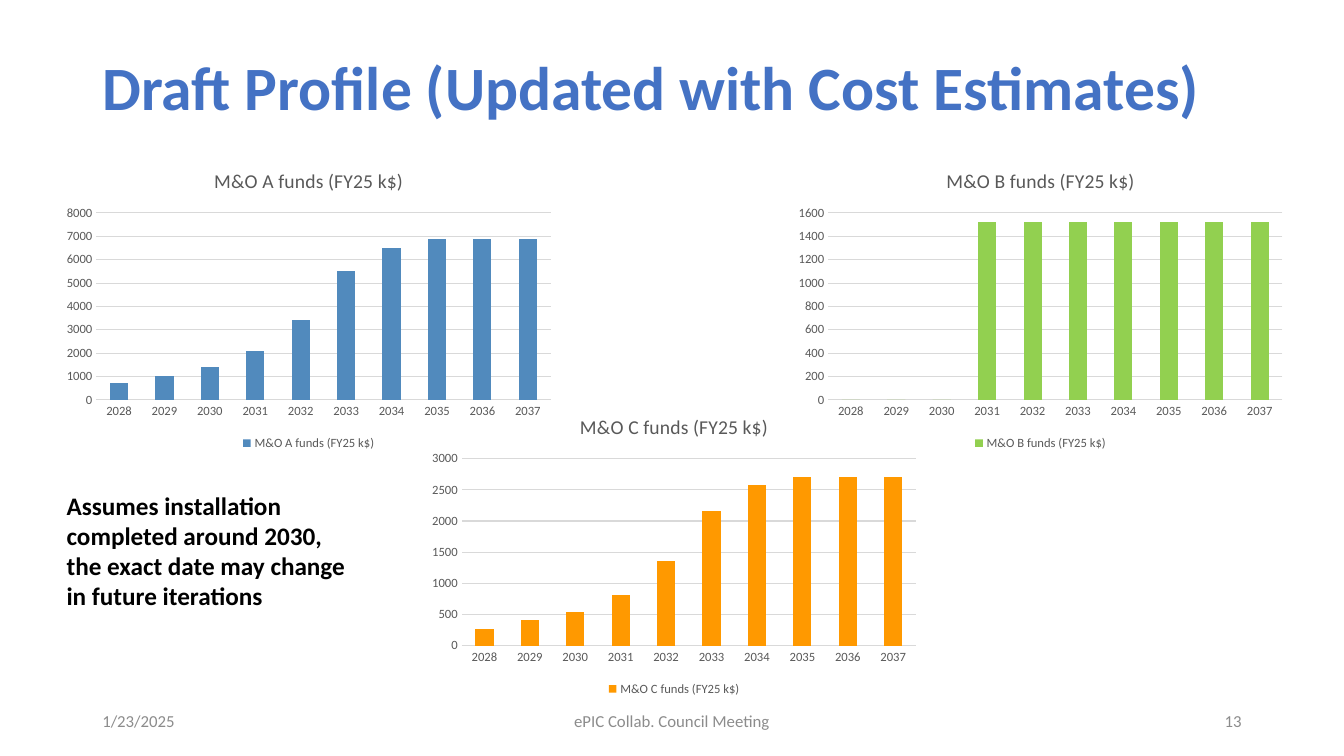
import dataclasses

import pptx
import pptx.chart.data
import pptx.dml.color
import pptx.enum.chart
import pptx.enum.text
import pptx.util

PX = 9525
ALIGN = pptx.enum.text.PP_ALIGN
ANCHOR = pptx.enum.text.MSO_ANCHOR
TICK = pptx.enum.chart.XL_TICK_MARK


@dataclasses.dataclass(frozen=True)
class Theme:
    """Colours, type sizes and the typeface of the slide."""
    face: str = "Calibri"
    title: str = "4472C4"
    foot: str = "8C8C8C"
    note: str = "000000"
    label: str = "595959"
    grid: str = "D9D9D9"
    fund_a: str = "518ABD"
    fund_b: str = "92D050"
    fund_c: str = "FF9900"
    title_pt: int = 44
    note_pt: int = 18
    head_pt: int = 14
    foot_pt: int = 12
    base_pt: int = 10
    label_pt: int = 9


THEME = Theme()
YEARS = [str(year) for year in range(2028, 2038)]
FUNDS = [
    ("A", THEME.fund_a, (54, 145, 480, 288),
     [700, 1000, 1400, 2100, 3400, 5500, 6500] + [6900] * 3),
    ("B", THEME.fund_b, (751, 145, 480, 288), [0] * 3 + [1520] * 7),
    ("C", THEME.fund_c, (402, 379, 480, 288),
     [270, 410, 540, 810, 1350, 2160, 2570] + [2700] * 3),
]


def scale(box):
    """Turn a box in px into EMU."""
    return [side * PX for side in box]


def color(code):
    """Return a colour from its hex code."""
    return pptx.dml.color.RGBColor.from_string(code)


def style(font, size, code, bold=False):
    """Set the face, size, colour and weight of a font."""
    font.name = THEME.face
    font.size = pptx.util.Pt(size)
    font.bold = bold
    font.color.rgb = color(code)


def add_text(slide, box, text, size, code, bold=False,
             align=ALIGN.LEFT, anchor=ANCHOR.MIDDLE):
    """Add a wrapped text box and return its frame."""
    frame = slide.shapes.add_textbox(*scale(box)).text_frame
    frame.word_wrap = True
    frame.vertical_anchor = anchor
    frame.text = text
    para = frame.paragraphs[0]
    para.alignment = align
    style(para.runs[0].font, size, code, bold)
    return frame


def add_title(slide, box):
    """Add the slide heading."""
    frame = add_text(slide, box, "Draft Profile (Updated with Cost Estimates)",
                     THEME.title_pt, THEME.title, bold=True)
    frame.paragraphs[0].line_spacing = 0.9


def add_note(slide, box):
    """Add the remark on the installation date."""
    frame = add_text(
        slide, box, "Assumes installation completed around 2030, "
        "the exact date may change in future iterations",
        THEME.note_pt, THEME.note, bold=True, anchor=ANCHOR.TOP)
    frame.auto_size = pptx.enum.text.MSO_AUTO_SIZE.SHAPE_TO_FIT_TEXT


def add_footer(slide, box):
    """Add date, meeting and page number across the box."""
    left, top, width, height = box
    side, middle = 288, 432
    parts = [
        ("1/23/2025", left, side, ALIGN.LEFT),
        ("ePIC Collab. Council Meeting", left + (width - middle) // 2,
         middle, ALIGN.CENTER),
        ("13", left + width - side, side, ALIGN.RIGHT),
    ]
    for text, start, span, align in parts:
        add_text(slide, (start, top, span, height), text,
                 THEME.foot_pt, THEME.foot, align=align)


def add_fund(slide, box, fund, code, values):
    """Add the yearly column chart of one fund."""
    name = f"M&O {fund} funds (FY25 k$)"
    data = pptx.chart.data.CategoryChartData()
    data.categories = YEARS
    data.add_series(name, values)
    kind = pptx.enum.chart.XL_CHART_TYPE.COLUMN_STACKED
    chart = slide.shapes.add_chart(kind, *scale(box), data).chart
    style(chart.font, THEME.base_pt, THEME.note)

    chart.has_title = True
    title = chart.chart_title
    title.include_in_layout = False
    title.text_frame.text = name
    style(title.text_frame.paragraphs[0].runs[0].font,
          THEME.head_pt, THEME.label)

    chart.has_legend = True
    chart.legend.position = pptx.enum.chart.XL_LEGEND_POSITION.BOTTOM
    chart.legend.include_in_layout = False
    style(chart.legend.font, THEME.label_pt, THEME.label)

    years, funds = chart.category_axis, chart.value_axis
    for axis in (years, funds):
        axis.major_tick_mark = TICK.NONE
        axis.minor_tick_mark = TICK.NONE
        style(axis.tick_labels.font, THEME.label_pt, THEME.label)
    funds.has_major_gridlines = True
    funds.format.line.fill.background()
    for line in (years.format.line, funds.major_gridlines.format.line):
        line.color.rgb = color(THEME.grid)
        line.width = pptx.util.Pt(0.75)

    plot = chart.plots[0]
    plot.vary_by_categories = False
    plot.gap_width = 150
    plot.overlap = 100
    fill = plot.series[0].format.fill
    fill.solid()
    fill.fore_color.rgb = color(code)


def main():
    """Build and save the slide."""
    deck = pptx.Presentation()
    deck.slide_width, deck.slide_height = scale((1280, 720))
    slide = deck.slides.add_slide(deck.slide_layouts[6])
    add_title(slide, (88, 38, 1104, 97))
    add_footer(slide, (88, 667, 1104, 38))
    add_note(slide, (54, 462, 300, 126))
    for fund, code, box, values in FUNDS:
        add_fund(slide, box, fund, code, values)
    deck.save("out.pptx")


if __name__ == "__main__":
    main()
